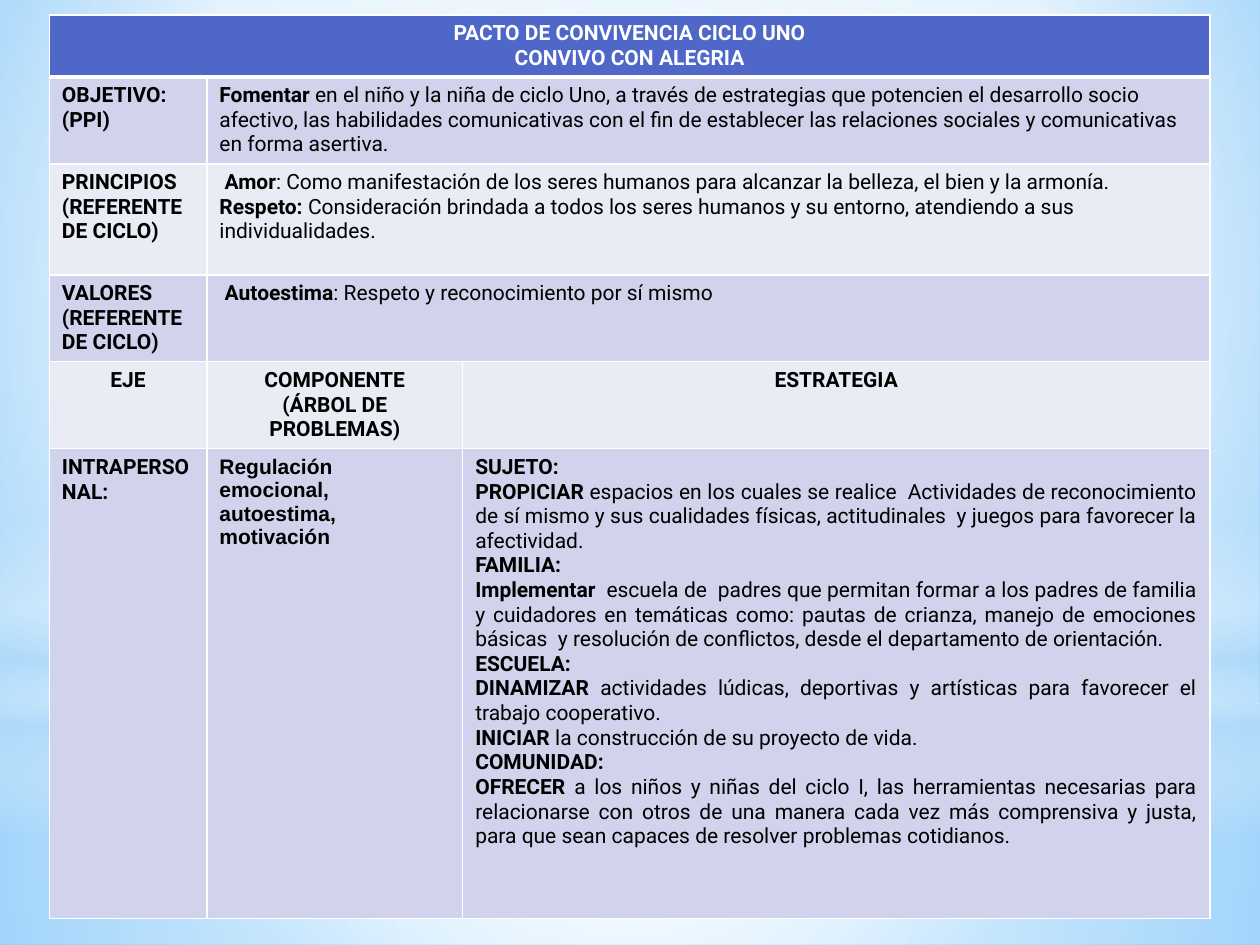
from dataclasses import dataclass

import pptx
import pptx.dml.color
import pptx.enum.shapes
import pptx.enum.text
import pptx.oxml
import pptx.oxml.ns
import pptx.util
from lxml import etree

Pt = pptx.util.Pt
RGB = pptx.dml.color.RGBColor.from_string
qn = pptx.oxml.ns.qn
ALIGN = pptx.enum.text.PP_ALIGN
SHAPE = pptx.enum.shapes.MSO_SHAPE


@dataclass(frozen=True)
class Theme:
    header: str = "4E67C8"
    dark_band: str = "D0D3EB"
    light_band: str = "E9EBF5"
    white: str = "FFFFFF"
    ink: str = "000000"
    sky: str = "B4DCFA"
    sky_middle: str = "9ED5FF"
    sky_edge: str = "5BB9FF"
    font: str = "Roboto"
    component_font: str = "Arial"
    size: float = 12
    border: float = 1
    header_rule: float = 3


THEME = Theme()
CENTRE = (50, 50, 50, 50)

COLUMNS = (90, 146.2, 427)
ROWS = (35.3, 49.7, 63.4, 49.7, 49.7, 268.6)

# Each paragraph is a bold lead and the plain text after it
HEADING = [("PACTO DE CONVIVENCIA CICLO UNO", ""), ("CONVIVO CON ALEGRIA", "")]
CYCLE = ("(REFERENTE DE CICLO)", "")
STATEMENTS = [
    ([("OBJETIVO:", ""), ("(PPI)", "")],
     [("Fomentar", " en el niño y la niña de ciclo Uno, a través de estrategias que potencien "
       "el desarrollo socio afectivo, las habilidades comunicativas con el fin de establecer "
       "las relaciones sociales y comunicativas en forma asertiva.")]),
    ([("PRINCIPIOS", ""), CYCLE],
     [(" Amor", ": Como manifestación de los seres humanos para alcanzar la belleza, "
       "el bien y la armonía."),
      ("Respeto: ", "Consideración brindada a todos los seres humanos y su entorno, "
       "atendiendo a sus individualidades.")]),
    ([("VALORES", ""), CYCLE],
     [(" Autoestima", ": Respeto y reconocimiento por sí mismo")]),
]
COLUMN_HEADS = [
    [("EJE", "")],
    [("COMPONENTE", ""), ("(ÁRBOL DE PROBLEMAS)", "")],
    [("ESTRATEGIA", "")],
]
AXIS = [("INTRAPERSONAL:", "")]
COMPONENT = [("Regulación  emocional, autoestima, motivación", "")]
STRATEGY = [
    ("SUJETO: ", ""),
    ("PROPICIAR", " espacios en los cuales se realice  Actividades de reconocimiento de sí mismo "
     "y sus cualidades físicas, actitudinales  y juegos para favorecer la afectividad."),
    ("FAMILIA: ", ""),
    ("Implementar ", " escuela de  padres que permitan formar a los padres de familia y cuidadores "
     "en temáticas como: pautas de crianza, manejo de emociones básicas  y resolución de "
     "conflictos, desde el departamento de orientación. "),
    ("ESCUELA: ", ""),
    ("DINAMIZAR ", "actividades lúdicas, deportivas y artísticas para favorecer el trabajo "
     "cooperativo."),
    ("INICIAR ", "la construcción de su proyecto de vida."),
    ("COMUNIDAD: ", ""),
    ("OFRECER ", "a los niños y niñas del ciclo I, las herramientas necesarias para relacionarse "
     "con otros de una manera cada vez más comprensiva y justa, para que sean capaces de "
     "resolver problemas cotidianos."),
]


def paint_gradient(fill, element, stops, focus=None):
    """Stops are (position, colour, opacity) in percent; no focus means top to bottom."""
    fill.gradient()
    gradient = element.find(".//" + qn("a:gradFill"))
    for child in list(gradient):
        gradient.remove(child)
    stop_list = etree.SubElement(gradient, qn("a:gsLst"))
    for position, colour, opacity in stops:
        stop = etree.SubElement(stop_list, qn("a:gs"), pos=str(position * 1000))
        tint = etree.SubElement(stop, qn("a:srgbClr"), val=colour)
        if opacity < 100:
            etree.SubElement(tint, qn("a:alpha"), val=str(opacity * 1000))
    if focus is None:
        etree.SubElement(gradient, qn("a:lin"), ang="5400000", scaled="0")
        return
    circle = etree.SubElement(gradient, qn("a:path"), path="circle")
    sides = {side: str(inset * 1000) for side, inset in zip("ltrb", focus)}
    etree.SubElement(circle, qn("a:fillToRect"), **sides)


def add_glow(page, kind, top, height, stops, focus=CENTRE):
    glow = page.shapes.add_shape(kind, 0, Pt(top), Pt(720), Pt(height))
    glow.shadow.inherit = False
    glow.line.fill.background()
    paint_gradient(glow.fill, glow._element, stops, focus)


def add_backdrop(page):
    white, sky = THEME.white, THEME.sky
    paint_gradient(page.background.fill, page._element,
                   [(0, THEME.sky_middle, 100), (60, white, 100), (100, THEME.sky_edge, 100)],
                   (20, 10, 20, 60))
    add_glow(page, SHAPE.RECTANGLE, 401.8, 138.2,
             [(0, white, 91), (37, white, 76), (100, sky, 79)])
    add_glow(page, SHAPE.RECTANGLE, 0, 401.8,
             [(0, white, 89), (48, white, 62), (100, sky, 79)])
    add_glow(page, SHAPE.RECTANGLE, 296.6, 180,
             [(0, white, 0), (29, white, 30), (45, sky, 40), (55, white, 26),
              (65, sky, 60), (100, white, 0)], focus=None)
    add_glow(page, SHAPE.OVAL, 126, 401.8, [(0, white, 100), (56, white, 0)])


def set_borders(cell, top, bottom):
    properties = cell._tc.get_or_add_tcPr()
    widths = {"L": THEME.border, "R": THEME.border, "T": top, "B": bottom}
    for index, (side, width) in enumerate(widths.items()):
        line = etree.Element(qn("a:ln" + side), w=str(Pt(width)))
        solid = etree.SubElement(line, qn("a:solidFill"))
        etree.SubElement(solid, qn("a:srgbClr"), val=THEME.white)
        properties.insert(index, line)


def write_cell(cell, paragraphs, align=ALIGN.LEFT, colour=THEME.ink, font=THEME.font):
    frame = cell.text_frame
    for index, parts in enumerate(paragraphs):
        para = frame.add_paragraph() if index else frame.paragraphs[0]
        para.alignment = align
        for text, bold in zip(parts, (True, False)):
            if text:
                span = para.add_run()
                span.text = text
                span.font.name = font
                span.font.size = Pt(THEME.size)
                span.font.bold = bold
                span.font.color.rgb = RGB(colour)


def add_grid(page):
    frame = page.shapes.add_table(len(ROWS), len(COLUMNS), Pt(28.2), Pt(8.6),
                                  Pt(sum(COLUMNS)), Pt(sum(ROWS)))
    table = frame.table
    for column, width in zip(table.columns, COLUMNS):
        column.width = Pt(width)
    for number, (row, height) in enumerate(zip(table.rows, ROWS)):
        row.height = Pt(height)
        band = THEME.dark_band if number % 2 else THEME.light_band
        for cell in row.cells:
            cell.fill.solid()
            cell.fill.fore_color.rgb = RGB(band if number else THEME.header)
            set_borders(cell,
                        top=THEME.header_rule if number == 1 else THEME.border,
                        bottom=THEME.border if number else THEME.header_rule)
    return table


def fill_grid(table):
    # Heading across the whole width
    table.cell(0, 0).merge(table.cell(0, 2))
    write_cell(table.cell(0, 0), HEADING, ALIGN.CENTER, THEME.white)

    # Objective, principles and values
    for number, (label, statement) in enumerate(STATEMENTS, start=1):
        table.cell(number, 1).merge(table.cell(number, 2))
        write_cell(table.cell(number, 0), label)
        write_cell(table.cell(number, 1), statement)

    # Axis, component and strategy
    for column, head in enumerate(COLUMN_HEADS):
        write_cell(table.cell(4, column), head, ALIGN.CENTER)
    write_cell(table.cell(5, 0), AXIS)
    write_cell(table.cell(5, 1), COMPONENT, font=THEME.component_font)
    write_cell(table.cell(5, 2), STRATEGY, ALIGN.JUSTIFY)


def main():
    deck = pptx.Presentation()
    deck.slide_width, deck.slide_height = Pt(720), Pt(540)
    page = deck.slides.add_slide(deck.slide_layouts.get_by_name("Blank"))
    add_backdrop(page)
    fill_grid(add_grid(page))
    deck.save("out.pptx")


if __name__ == "__main__":
    main()
